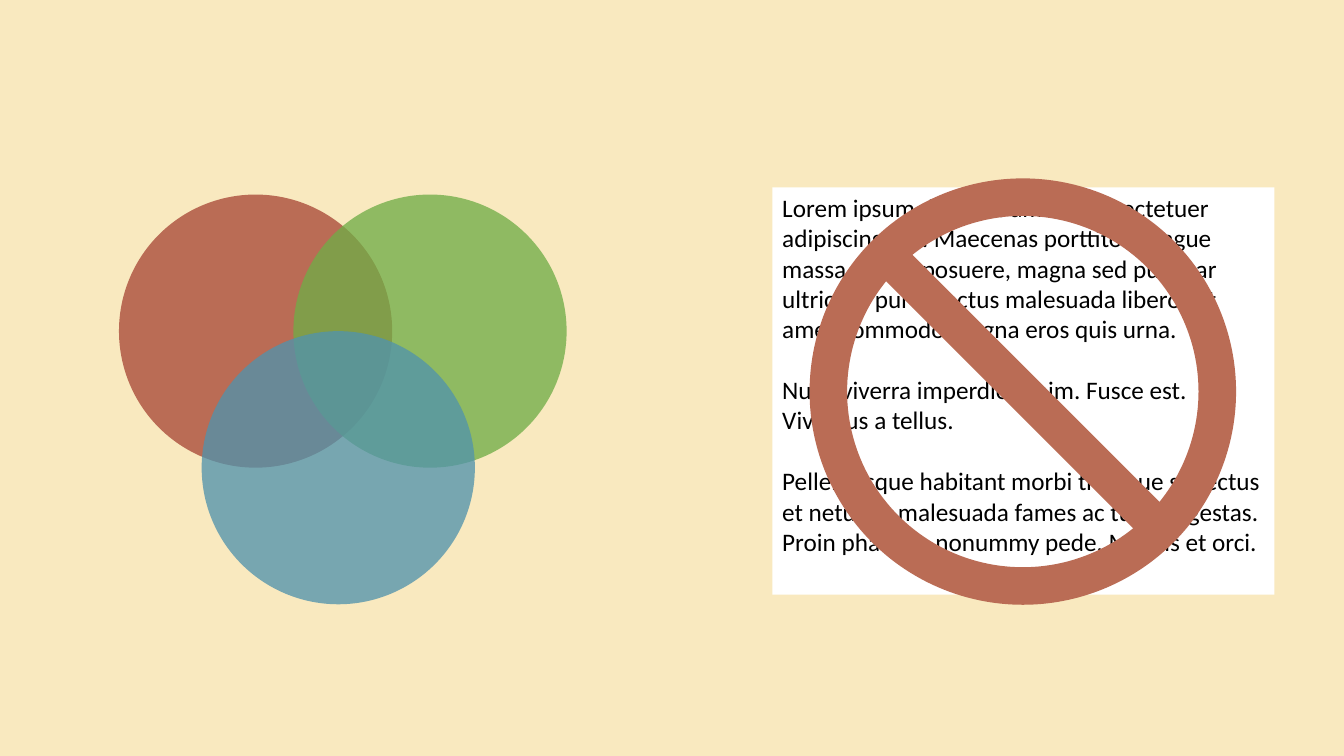
from lxml.etree import SubElement
from pptx import Presentation
from pptx.dml.color import RGBColor
from pptx.enum.shapes import MSO_SHAPE
from pptx.oxml.ns import qn
from pptx.util import Inches, Pt

WIDTH, HEIGHT = 13.33, 7.5
CIRCLE_SIZE = 2.71
COLORS = {
    "background": "F9E9BF",
    "paper": "FFFFFF",
    "text": "000000",
    "red": "BA6C55",
    "green": "70AD47",
    "blue": "5193AC",
}
FONT_FORMAT = {"name": "Calibri", "size": Pt(18)}
PARAGRAPHS = [
    "Lorem ipsum dolor sit amet, consectetuer adipiscing elit. Maecenas porttitor congue massa. "
    "Fusce posuere, magna sed pulvinar ultricies, purus lectus malesuada libero, sit amet commodo "
    "magna eros quis urna.",
    "Nunc viverra imperdiet enim. Fusce est. Vivamus a tellus.",
    "Pellentesque habitant morbi tristique senectus et netus et malesuada fames ac turpis egestas. "
    "Proin pharetra nonummy pede. Mauris et orci.",
]
CIRCLES = [
    (1.18, 1.93, "red", 100),
    (2.91, 1.93, "green", 77),
    (2.0, 1.93 + CIRCLE_SIZE / 2, "blue", 77),
]


def color(name):
    return RGBColor.from_string(COLORS[name])


def paint(fill, name):
    fill.solid()
    fill.fore_color.rgb = color(name)


def add_round_shape(slide, kind, left, top, size, fill_name, opacity=100):
    shape = slide.shapes.add_shape(kind, Inches(left), Inches(top), Inches(size), Inches(size))
    shape.shadow.inherit = False
    paint(shape.fill, fill_name)
    shape.line.fill.background()
    if opacity < 100:
        fill_color = shape.fill._xPr.find(qn("a:solidFill"))[0]
        SubElement(fill_color, qn("a:alpha"), val=str(opacity * 1000))
    return shape


def add_text_panel(slide, left, top, width, height):
    panel = slide.shapes.add_textbox(Inches(left), Inches(top), Inches(width), Inches(height))
    paint(panel.fill, "paper")
    frame = panel.text_frame
    frame.word_wrap = True
    for index, text in enumerate(PARAGRAPHS):
        paragraph = frame.add_paragraph() if index else frame.paragraphs[0]
        paragraph.space_before = Pt(22 if index else 0)
        run = paragraph.add_run()
        run.text = text
        for attribute, value in FONT_FORMAT.items():
            setattr(run.font, attribute, value)
        run.font.color.rgb = color("text")


def main():
    presentation = Presentation()
    presentation.slide_width = Inches(WIDTH)
    presentation.slide_height = Inches(HEIGHT)
    slide = presentation.slides.add_slide(presentation.slide_layouts[6])
    paint(slide.background.fill, "background")

    add_text_panel(slide, 7.66, 1.86, 4.98, 4.04)
    prohibition = add_round_shape(slide, MSO_SHAPE.NO_SYMBOL, 8.03, 1.77, 4.23, "red")
    prohibition.adjustments[0] = 0.088
    for left, top, fill_name, opacity in CIRCLES:
        add_round_shape(slide, MSO_SHAPE.OVAL, left, top, CIRCLE_SIZE, fill_name, opacity)

    presentation.save("out.pptx")


if __name__ == "__main__":
    main()
